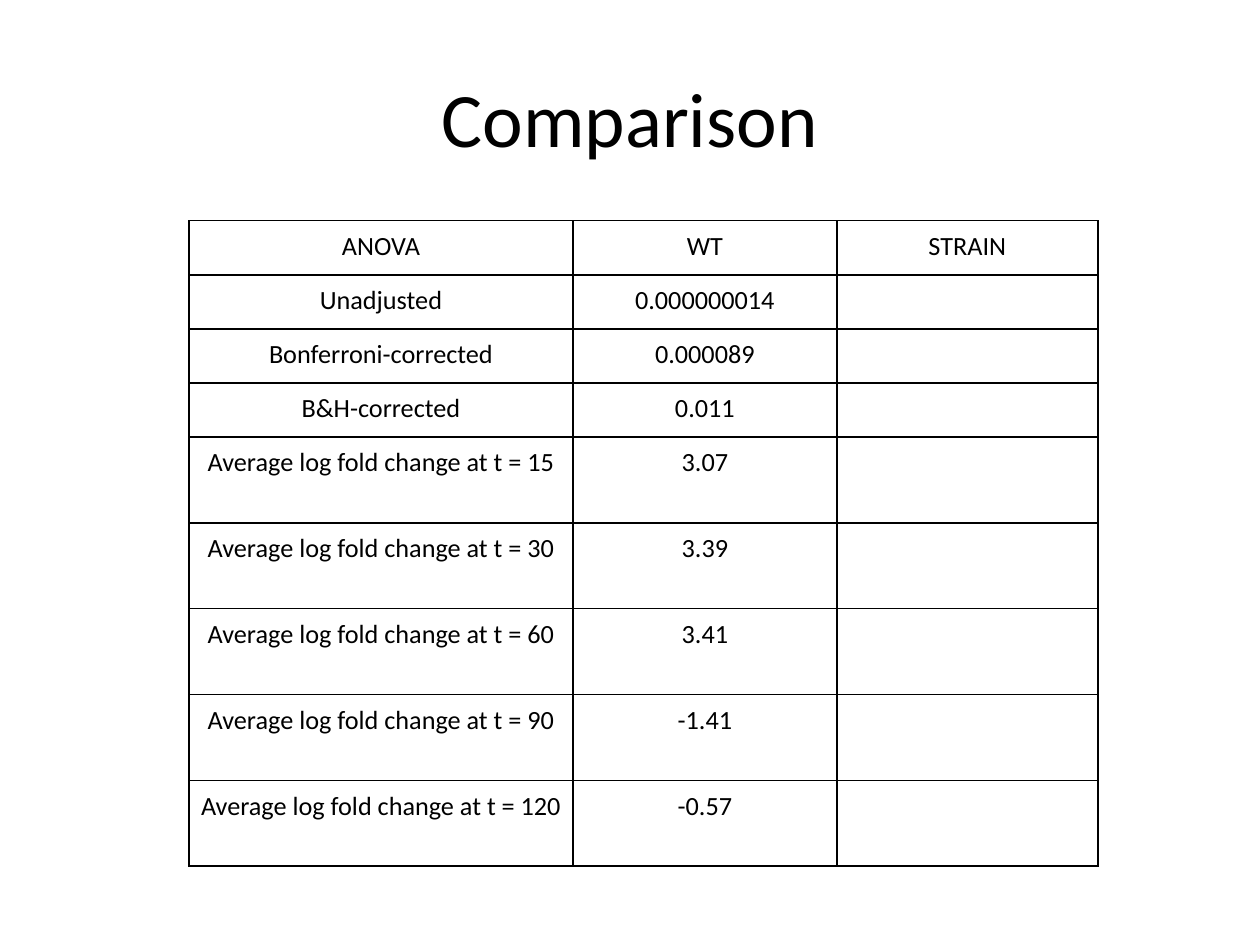
from dataclasses import dataclass

from lxml.etree import SubElement as Sub
from pptx import Presentation as Deck
from pptx.dml.color import RGBColor as Rgb
from pptx.enum.text import MSO_ANCHOR as Anchor, PP_ALIGN as Align
from pptx.oxml.ns import qn
from pptx.table import _Cell as Cell
from pptx.text.text import _Paragraph as Para
from pptx.util import Cm, Pt

INK = "000000"
WIDTHS = (7.74, 5.32, 5.26)
SHORT, TALL = 1.09, 1.73
PAD = Cm(0.2)


@dataclass
class Row:
    label: str
    wild: str
    strain: str = ""
    height: float = SHORT


ROWS = [
    Row("ANOVA", "WT", "STRAIN"),
    Row("Unadjusted", "0.000000014"),
    Row("Bonferroni-corrected", "0.000089"),
    Row("B&H-corrected", "0.011"),
] + [
    Row(f"Average log fold change at t = {time}", fold, height=TALL)
    for time, fold in ((15, "3.07"), (30, "3.39"), (60, "3.41"), (90, "-1.41"), (120, "-0.57"))
]


def apply(item: object, values: dict) -> None:
    for name, value in values.items():
        setattr(item, name, value)


def color(code: str) -> Rgb:
    return Rgb.from_string(code)


def style(para: Para, size: float) -> None:
    para.alignment = Align.CENTER
    for run in para.runs:
        apply(run.font, {"name": "Calibri", "size": Pt(size), "bold": False})
        run.font.color.rgb = color(INK)


def border(cell: Cell) -> None:
    props = cell._tc.get_or_add_tcPr()
    for side in ("lnL", "lnR", "lnT", "lnB"):
        line = Sub(props, qn(f"a:{side}"), w=str(Pt(1)))
        Sub(Sub(line, qn("a:solidFill")), qn("a:srgbClr"), val=INK)


def write(cell: Cell, text: str) -> None:
    border(cell)
    cell.fill.background()
    if text:
        cell.text = text
        apply(cell, {f"margin_{side}": PAD for side in ("left", "right", "top", "bottom")})
        style(cell.text_frame.paragraphs[0], 15)


def main() -> None:
    deck = Deck()
    apply(deck, {"slide_width": Cm(25.4), "slide_height": Cm(19.05)})
    slide = deck.slides.add_slide(deck.slide_layouts[5])

    title = slide.shapes.title
    apply(title, {"left": Cm(1.27), "top": Cm(0.76), "width": Cm(22.86), "height": Cm(3.18)})
    title.text = "Comparison"
    title.text_frame.vertical_anchor = Anchor.MIDDLE
    style(title.text_frame.paragraphs[0], 44)

    total = sum(row.height for row in ROWS)
    frame = slide.shapes.add_table(
        len(ROWS), len(WIDTHS), Cm(3.81), Cm(4.45), Cm(sum(WIDTHS)), Cm(total))
    table = frame.table
    apply(table, {"first_row": False, "horz_banding": False})
    for col, width in zip(table.columns, WIDTHS):
        col.width = Cm(width)
    for line, row in zip(table.rows, ROWS):
        line.height = Cm(row.height)
        for cell, text in zip(line.cells, (row.label, row.wild, row.strain)):
            write(cell, text)

    deck.save("out.pptx")


if __name__ == "__main__":
    main()
